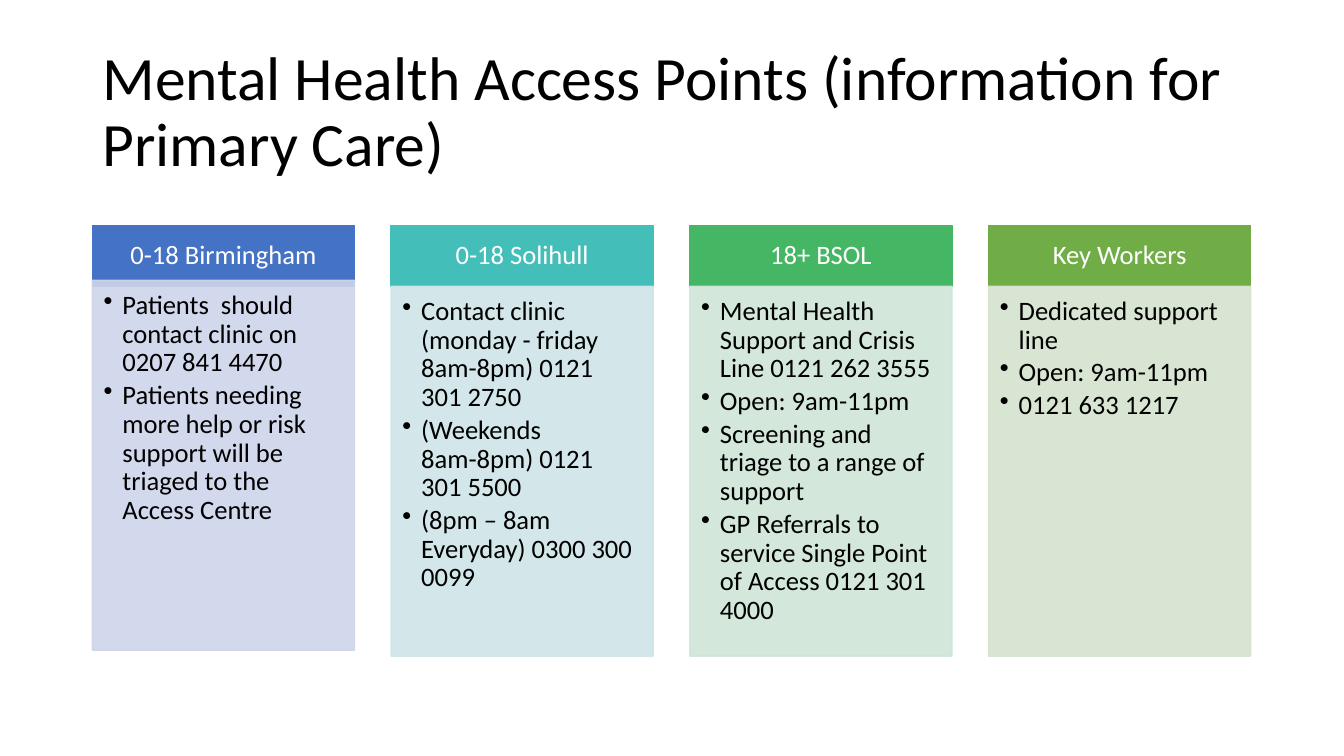
from pptx import Presentation
from pptx.dml.color import RGBColor
from pptx.enum.shapes import MSO_SHAPE
from pptx.enum.text import MSO_ANCHOR, MSO_AUTO_SIZE, PP_ALIGN
from pptx.oxml.ns import qn
from pptx.util import Pt
from lxml.etree import SubElement

BLACK = RGBColor(0x00, 0x00, 0x00)
WHITE = RGBColor(0xFF, 0xFF, 0xFF)
BLUE = RGBColor(0x44, 0x72, 0xC4)
PALE_BLUE = RGBColor(0xCF, 0xD5, 0xEA)
TEAL = RGBColor(0x43, 0xBE, 0xB9)
PALE_TEAL = RGBColor(0xCF, 0xE5, 0xE8)
GREEN = RGBColor(0x45, 0xB6, 0x64)
PALE_GREEN = RGBColor(0xCF, 0xE5, 0xD8)
OLIVE = RGBColor(0x70, 0xAD, 0x47)
PALE_OLIVE = RGBColor(0xD5, 0xE3, 0xCF)

TITLE = "Mental Health Access Points (information for Primary Care)"
ACCESS_POINTS = [
    ("0-18 Birmingham", BLUE, PALE_BLUE, 4.3, [
        "Patients  should contact clinic on 0207 841 4470",
        "Patients needing more help or risk support will be triaged to the Access Centre",
    ]),
    ("0-18 Solihull", TEAL, PALE_TEAL, 0, [
        "Contact clinic (monday - friday 8am-8pm) 0121 301 2750",
        "(Weekends 8am-8pm) 0121 301 5500",
        "(8pm – 8am Everyday) 0300 300 0099",
    ]),
    ("18+ BSOL", GREEN, PALE_GREEN, 0, [
        "Mental Health Support and Crisis Line 0121 262 3555",
        "Open: 9am-11pm",
        "Screening and triage to a range of support",
        "GP Referrals to service Single Point of Access 0121 301 4000",
    ]),
    ("Key Workers", OLIVE, PALE_OLIVE, 0, [
        "Dedicated support line",
        "Open: 9am-11pm",
        "0121 633 1217",
    ]),
]

HEADER_HEIGHT = 43.2
COLUMN_WIDTH = 187.2

HEADER_FRAME = {
    "word_wrap": True, "vertical_anchor": MSO_ANCHOR.MIDDLE,
    "margin_left": Pt(10.6), "margin_right": Pt(10.6),
    "margin_top": Pt(6), "margin_bottom": Pt(6),
}
BODY_FRAME = {
    "word_wrap": True, "vertical_anchor": MSO_ANCHOR.TOP,
    "margin_left": Pt(8), "margin_right": Pt(10.6),
    "margin_top": Pt(8), "margin_bottom": Pt(12),
}
TITLE_FRAME = {
    "word_wrap": True, "vertical_anchor": MSO_ANCHOR.MIDDLE,
    "auto_size": MSO_AUTO_SIZE.NONE,
}
TITLE_PARAGRAPH = {"alignment": PP_ALIGN.LEFT, "line_spacing": 0.9}
HEADER_PARAGRAPH = {"alignment": PP_ALIGN.CENTER, "line_spacing": 0.9}
BODY_PARAGRAPH = {
    "alignment": PP_ALIGN.LEFT, "line_spacing": 0.9, "space_after": Pt(2.8),
}


def apply(target, values):
    for name, value in values.items():
        setattr(target, name, value)


def write(shape, lines, frame_format, paragraph_format, size, color):
    frame = shape.text_frame
    frame.text = "\n".join(lines)
    apply(frame, frame_format)
    for paragraph in frame.paragraphs:
        apply(paragraph, paragraph_format)
        apply(paragraph.font, {"name": "Calibri", "size": Pt(size)})
        paragraph.font.color.rgb = color


def add_bullets(shape):
    for paragraph in shape.text_frame.paragraphs:
        properties = paragraph._p.get_or_add_pPr()
        properties.set("marL", str(Pt(13.5)))
        properties.set("indent", str(-Pt(13.5)))
        bullet = SubElement(properties, qn("a:buChar"))
        bullet.set("char", "•")
        defaults = properties.find(qn("a:defRPr"))
        if defaults is not None:
            defaults.addprevious(bullet)


def add_box(slide, left, top, width, height, color):
    shape = slide.shapes.add_shape(
        MSO_SHAPE.RECTANGLE, Pt(left), Pt(top), Pt(width), Pt(height))
    shape.shadow.inherit = False
    shape.fill.solid()
    shape.fill.fore_color.rgb = color
    shape.line.color.rgb = color
    shape.line.width = Pt(1)
    return shape


def make_translucent(shape, percent):
    for color in shape._element.spPr.iter(qn("a:srgbClr")):
        SubElement(color, qn("a:alpha")).set("val", str(percent * 1000))


def add_title(slide, left, top, width, height):
    title = slide.shapes.title
    apply(title, {"left": Pt(left), "top": Pt(top),
                  "width": Pt(width), "height": Pt(height)})
    write(title, [TITLE], TITLE_FRAME, TITLE_PARAGRAPH, 44, BLACK)


def add_column(slide, left, top, width, height, access_point):
    heading, color, pale_color, overlap, details = access_point
    header = add_box(slide, left, top, width, HEADER_HEIGHT, color)
    write(header, [heading], HEADER_FRAME, HEADER_PARAGRAPH, 19, WHITE)
    body = add_box(slide, left, top + HEADER_HEIGHT - overlap,
                   width, height - HEADER_HEIGHT, pale_color)
    make_translucent(body, 90)
    write(body, details, BODY_FRAME, BODY_PARAGRAPH, 19, BLACK)
    add_bullets(body)


def add_columns(slide, left, top, width, height):
    pitch = (width - COLUMN_WIDTH) / (len(ACCESS_POINTS) - 1)
    for index, access_point in enumerate(ACCESS_POINTS):
        add_column(slide, left + index * pitch, top, COLUMN_WIDTH, height,
                   access_point)


def main():
    presentation = Presentation()
    apply(presentation, {"slide_width": Pt(960), "slide_height": Pt(540)})
    slide = presentation.slides.add_slide(presentation.slide_layouts[5])
    add_title(slide, 66, 28.8, 828, 104.4)
    add_columns(slide, 66, 161.3, 827.4, 307.4)
    presentation.save("out.pptx")


if __name__ == "__main__":
    main()
